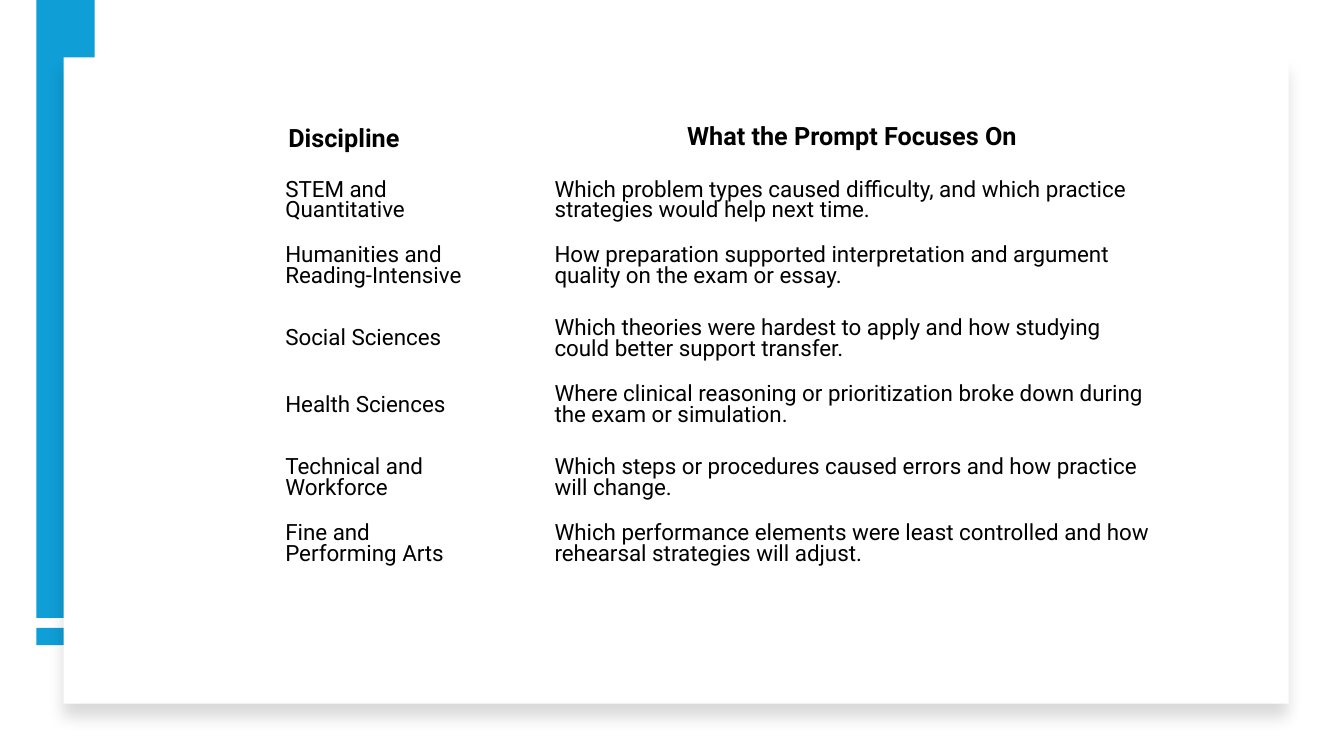
from dataclasses import dataclass

from lxml.etree import SubElement
from pptx import Presentation
from pptx.dml.color import RGBColor
from pptx.enum.shapes import MSO_SHAPE
from pptx.enum.text import MSO_ANCHOR, PP_ALIGN
from pptx.oxml.ns import qn
from pptx.util import Inches, Pt

BLUE = RGBColor(0x0F, 0x9E, 0xD5)
WHITE = RGBColor(0xFF, 0xFF, 0xFF)
BLACK = RGBColor(0x00, 0x00, 0x00)
FONT = "Roboto"


@dataclass
class Panel:
    left: float
    top: float
    width: float
    height: float
    fill: RGBColor
    raised: bool = False


@dataclass
class Entry:
    field: list[str]
    focus: str
    height: float


PANELS = [
    Panel(0.36, 6.23, 0.58, 0.17, BLUE),
    Panel(0.36, 0, 0.58, 6.13, BLUE),
    Panel(0.63, 0.57, 12.15, 6.41, WHITE, raised=True),
]
WIDTHS = [2.64, 6.1]
HEAD = Entry(["Discipline"], "What the Prompt Focuses On", 0.73)
ENTRIES = [
    Entry(["STEM and", "Quantitative"],
          "Which problem types caused difficulty, and which practice strategies would help next time.", 0.42),
    Entry(["Humanities and", "Reading-Intensive"],
          "How preparation supported interpretation and argument quality on the exam or essay.", 0.79),
    Entry(["Social Sciences"],
          "Which theories were hardest to apply and how studying could better support transfer.", 0.65),
    Entry(["Health Sciences"],
          "Where clinical reasoning or prioritization broke down during the exam or simulation.", 0.67),
    Entry(["Technical and", "Workforce"],
          "Which steps or procedures caused errors and how practice will change.", 0.77),
    Entry(["Fine and", "Performing Arts"],
          "Which performance elements were least controlled and how rehearsal strategies will adjust.", 0.55),
]


def add_shade(shape) -> None:
    effects = shape._element.spPr.find(qn("a:effectLst"))
    shade = SubElement(effects, qn("a:outerShdw"), blurRad=str(Pt(11)),
                       dist=str(Pt(10)), dir="5400000", algn="t", rotWithShape="0")
    color = SubElement(shade, qn("a:srgbClr"), val=str(BLACK))
    SubElement(color, qn("a:alpha"), val="15000")


def add_panel(slide, panel: Panel) -> None:
    shape = slide.shapes.add_shape(
        MSO_SHAPE.RECTANGLE, Inches(panel.left), Inches(panel.top),
        Inches(panel.width), Inches(panel.height))
    shape.shadow.inherit = False
    shape.fill.solid()
    shape.fill.fore_color.rgb = panel.fill
    shape.line.fill.background()
    if panel.raised:
        add_shade(shape)


def fill_cell(cell, lines: list[str], size: int = 16, bold: bool = False,
              align: PP_ALIGN = PP_ALIGN.LEFT, space: float = 0.8,
              side: float = 0.1, edge: float = 0.05) -> None:
    cell.fill.background()
    cell.vertical_anchor = MSO_ANCHOR.MIDDLE
    cell.margin_left = cell.margin_right = Inches(side)
    cell.margin_top = cell.margin_bottom = Inches(edge)
    frame = cell.text_frame
    for index, line in enumerate(lines):
        para = frame.add_paragraph() if index else frame.paragraphs[0]
        para.alignment = align
        para.line_spacing = space
        run = para.add_run()
        run.text = line
        run.font.name = FONT
        run.font.size = Pt(size)
        run.font.bold = bold
        run.font.color.rgb = BLACK


def add_grid(slide) -> None:
    rows = [HEAD, *ENTRIES]
    table = slide.shapes.add_table(
        len(rows), len(WIDTHS), Inches(2.76), Inches(1.01),
        Inches(sum(WIDTHS)), Inches(sum(row.height for row in rows))).table
    table.first_row = False
    table.horz_banding = False
    for column, width in zip(table.columns, WIDTHS):
        column.width = Inches(width)
    for row, entry in zip(table.rows, rows):
        row.height = Inches(entry.height)
    fill_cell(table.cell(0, 0), HEAD.field, 18, True, space=1.0)
    fill_cell(table.cell(0, 1), [HEAD.focus], 18, True, PP_ALIGN.CENTER)
    for index, entry in enumerate(ENTRIES, 1):
        fill_cell(table.cell(index, 0), entry.field, side=0.07, edge=0.04)
        fill_cell(table.cell(index, 1), [entry.focus])


def main() -> None:
    deck = Presentation()
    deck.slide_width = Inches(13.33)
    deck.slide_height = Inches(7.5)
    slide = deck.slides.add_slide(deck.slide_layouts[6])
    for panel in PANELS:
        add_panel(slide, panel)
    add_grid(slide)
    deck.save("out.pptx")


if __name__ == "__main__":
    main()
